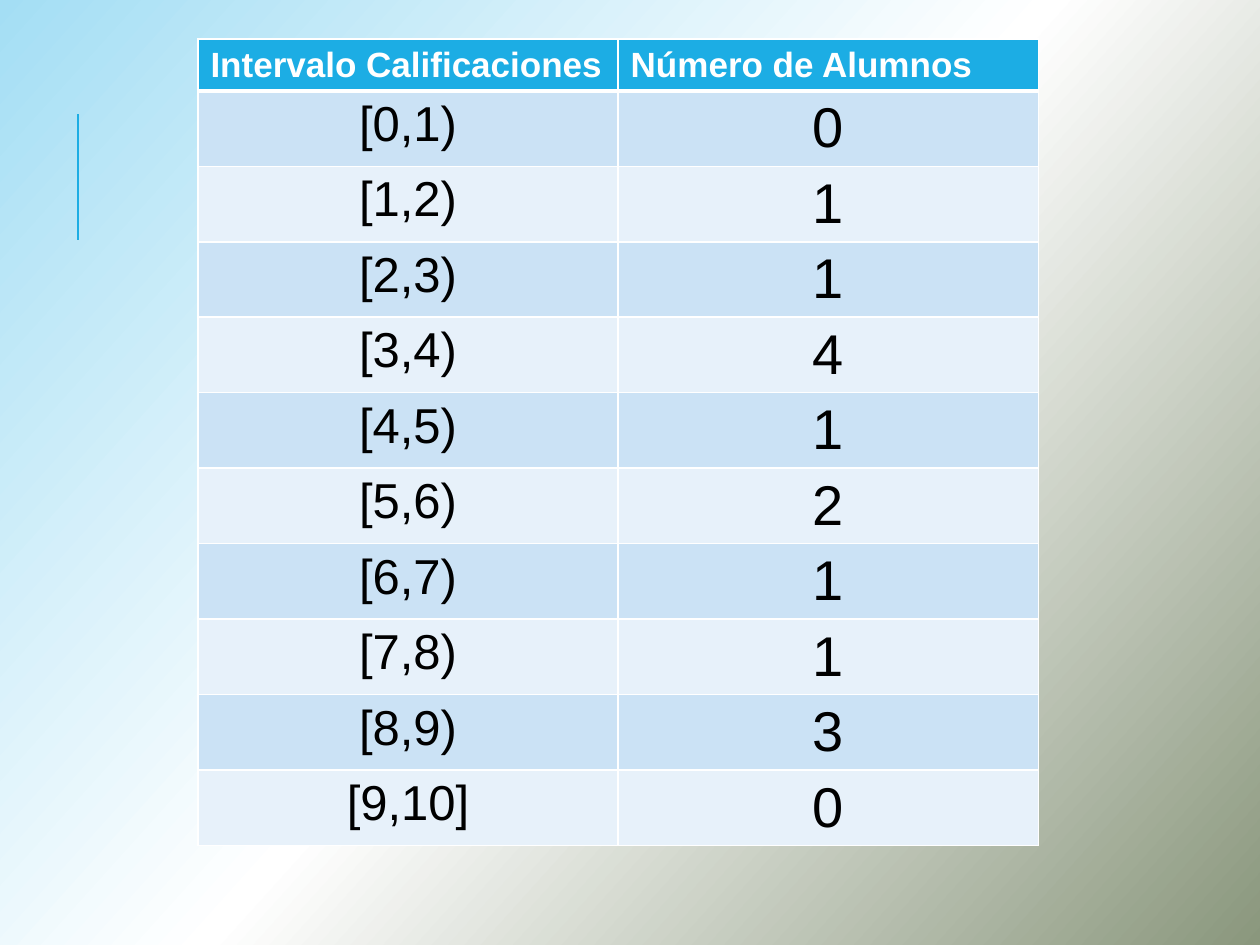
import copy

import lxml.etree
import pptx
import pptx.dml.color
import pptx.enum.shapes
import pptx.enum.text
import pptx.oxml.ns
import pptx.util
from pptx.util import Cm

RGBColor = pptx.dml.color.RGBColor
ACCENT = RGBColor(0x1C, 0xAD, 0xE4)
WHITE = RGBColor(0xFF, 0xFF, 0xFF)
BLACK = RGBColor(0x00, 0x00, 0x00)
BANDS = (RGBColor(0xCB, 0xE2, 0xF5), RGBColor(0xE7, 0xF1, 0xFA))
BACKGROUND = (RGBColor(0xA4, 0xDE, 0xF4), WHITE, RGBColor(0x8A, 0x97, 0x7D))

HEADERS = ("Intervalo Calificaciones", "Número de Alumnos")
STUDENT_COUNTS = (0, 1, 1, 4, 1, 2, 1, 1, 3, 0)
BODY_SIZES = (28, 32)
COLUMN_WIDTH = Cm(8.47)
HEADER_HEIGHT = Cm(1.04)
BODY_HEIGHT = Cm(1.52)


def set_background(slide):
    fill = slide.background.fill
    fill.gradient()
    fill.gradient_angle = 318
    stop_list = slide.element.find(".//" + pptx.oxml.ns.qn("a:gsLst"))
    stop_list.insert(1, copy.deepcopy(stop_list[0]))
    for index, (stop, color) in enumerate(zip(fill.gradient_stops, BACKGROUND)):
        stop.position = index / 2
        stop.color.rgb = color


def add_accent_line(slide):
    line = slide.shapes.add_connector(
        pptx.enum.shapes.MSO_CONNECTOR.STRAIGHT, Cm(1.57), Cm(4.83), Cm(1.57), Cm(2.29))
    line.line.color.rgb = ACCENT
    line.line.width = pptx.util.Pt(1.5)
    properties = line.element.find(pptx.oxml.ns.qn("p:spPr"))
    lxml.etree.SubElement(properties, pptx.oxml.ns.qn("a:effectLst"))


def set_borders(cell, top, bottom):
    properties = cell._tc.get_or_add_tcPr()
    widths = {"a:lnL": 1, "a:lnR": 1, "a:lnT": top, "a:lnB": bottom}
    for position, (tag, width) in enumerate(widths.items()):
        border = lxml.etree.Element(
            pptx.oxml.ns.qn(tag), w=str(pptx.util.Pt(width)))
        solid = lxml.etree.SubElement(border, pptx.oxml.ns.qn("a:solidFill"))
        lxml.etree.SubElement(solid, pptx.oxml.ns.qn("a:srgbClr"), val=str(WHITE))
        properties.insert(position, border)


def fill_cell(cell, text, size, color, fill, is_header=False):
    cell.fill.solid()
    cell.fill.fore_color.rgb = fill
    paragraph = cell.text_frame.paragraphs[0]
    paragraph.text = text
    if not is_header:
        paragraph.alignment = pptx.enum.text.PP_ALIGN.CENTER
    paragraph.font.name = "Arial"
    paragraph.font.size = pptx.util.Pt(size)
    paragraph.font.bold = is_header
    paragraph.font.color.rgb = color


def add_grades_table(slide):
    row_count = len(STUDENT_COUNTS) + 1
    table = slide.shapes.add_table(
        row_count, 2, Cm(3.99), Cm(0.79), 2 * COLUMN_WIDTH,
        HEADER_HEIGHT + BODY_HEIGHT * len(STUDENT_COUNTS)).table
    for column in table.columns:
        column.width = COLUMN_WIDTH
    for index, row in enumerate(table.rows):
        row.height = BODY_HEIGHT if index else HEADER_HEIGHT

    for column, header in enumerate(HEADERS):
        cell = table.cell(0, column)
        fill_cell(cell, header, 20, WHITE, ACCENT, is_header=True)
        set_borders(cell, 1, 3)

    for grade, count in enumerate(STUDENT_COUNTS):
        closing = "]" if grade == len(STUDENT_COUNTS) - 1 else ")"
        values = (f"[{grade},{grade + 1}{closing}", str(count))
        for column, (value, size) in enumerate(zip(values, BODY_SIZES)):
            cell = table.cell(grade + 1, column)
            fill_cell(cell, value, size, BLACK, BANDS[grade % 2])
            set_borders(cell, 1 if grade else 3, 1)


def main():
    presentation = pptx.Presentation()
    presentation.slide_width = Cm(25.4)
    presentation.slide_height = Cm(19.05)
    slide = presentation.slides.add_slide(presentation.slide_layouts[6])
    set_background(slide)
    add_accent_line(slide)
    add_grades_table(slide)
    presentation.save("out.pptx")


if __name__ == "__main__":
    main()
